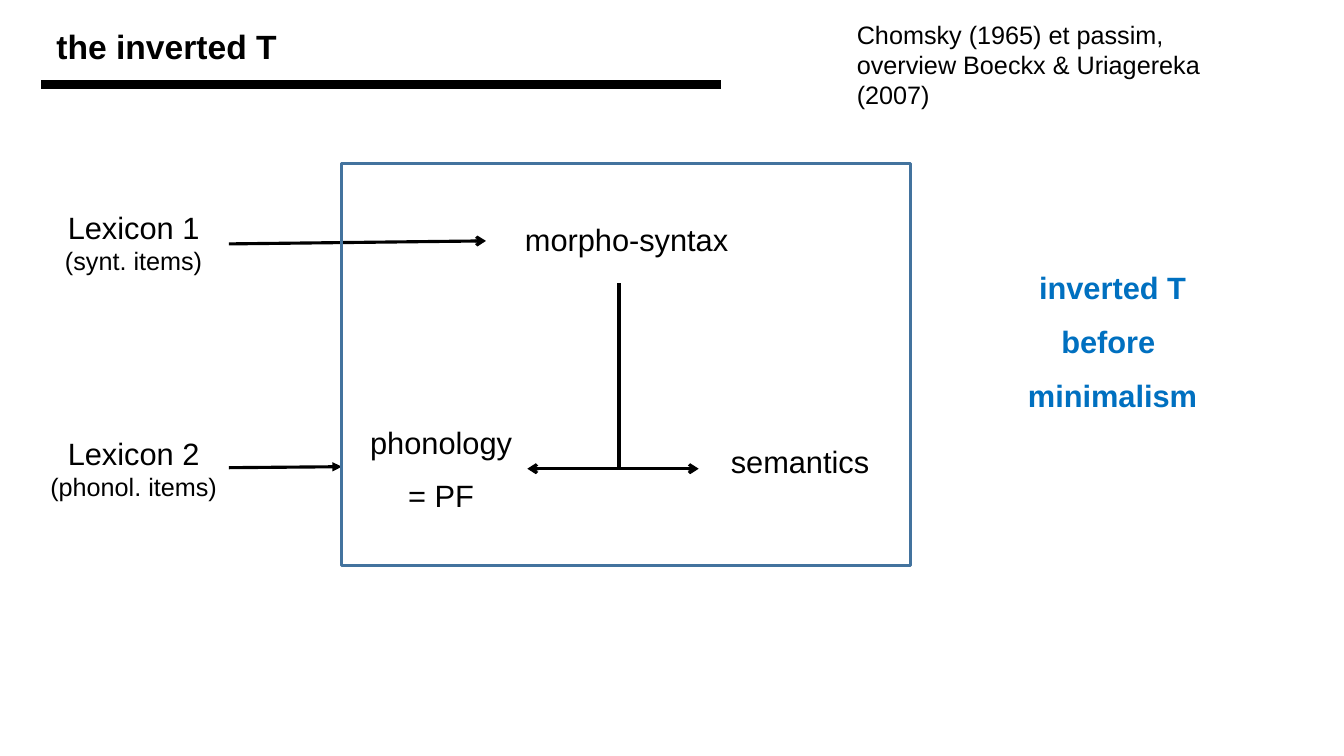
from lxml import etree
from pptx import Presentation
from pptx.dml.color import RGBColor
from pptx.enum.shapes import MSO_CONNECTOR, MSO_SHAPE
from pptx.enum.text import MSO_ANCHOR, PP_ALIGN
from pptx.oxml.ns import qn
from pptx.util import Pt

PX = 9144  # 100 px to the inch
LINE = MSO_CONNECTOR.STRAIGHT
RECT = MSO_SHAPE.RECTANGLE
TOP = MSO_ANCHOR.TOP
LEFT, MID = PP_ALIGN.LEFT, PP_ALIGN.CENTER
BLACK, BLUE, STEEL = "000000", "0070C0", "43739E"
hue = RGBColor.from_string

deck = Presentation()
deck.slide_width, deck.slide_height = 1333 * PX, 750 * PX
slide = deck.slides.add_slide(deck.slide_layouts[5])
shapes = slide.shapes


def write(text, box, sizes=(22,), color=BLACK, bold=False, align=MID, gap=0, shape=None):
    """Put one paragraph per line of text; the last size holds for the rest."""
    place = [n * PX for n in box]
    if shape is None:
        shape = shapes.add_textbox(*place)
    shape.left, shape.top, shape.width, shape.height = place
    frame = shape.text_frame
    frame.word_wrap = True
    frame.vertical_anchor = TOP
    frame.text = text
    for i, para in enumerate(frame.paragraphs):
        para.alignment = align
        para.space_before = Pt(gap if i else 0)
        font = para.runs[0].font
        font.name, font.bold = "Arial", bold
        font.size = Pt(sizes[min(i, len(sizes) - 1)])
        font.color.rgb = hue(color)


def draw(ends, width=2.25, head=None, tail=None):
    link = shapes.add_connector(LINE, *[n * PX for n in ends])
    link.line.color.rgb = hue(BLACK)
    link.line.width = Pt(width)
    props = link.line._get_or_add_ln()
    for tag, kind in (("a:headEnd", head), ("a:tailEnd", tail)):
        if kind:
            etree.SubElement(props, qn(tag), type=kind)
    etree.SubElement(link._element.spPr, qn("a:effectLst"))


# Heading
write("the inverted T", (46, 21, 835, 50), sizes=(24,), bold=True,
      align=LEFT, shape=shapes.title)
draw((41, 84, 715, 84), width=6)
write("Chomsky (1965) et passim, overview Boeckx & Uriagereka (2007)",
      (840, 14, 417, 101), sizes=(18,), align=LEFT)

# Lexicons and their arrows
for text, top in (("Lexicon 1\n(synt. items)", 202), ("Lexicon 2\n(phonol. items)", 426)):
    write(text, (32, top, 201, 77), sizes=(22, 18))
draw((227, 242, 482, 239), tail="arrow")
draw((227, 464, 339, 463), tail="triangle")

# Grammar box with the inverted T
frame = shapes.add_shape(RECT, *[n * PX for n in (339, 162, 564, 399)])
frame.shadow.inherit = False
frame.fill.background()
frame.line.color.rgb = hue(STEEL)
frame.line.width = Pt(2)
write("morpho-syntax", (326, 214, 591, 47))
write("semantics", (693, 434, 201, 47))
write("phonology\n= PF", (337, 415, 201, 103), gap=12)
draw((614, 281, 614, 465))
draw((523, 465, 693, 465), head="arrow", tail="arrow")

# Side label
write("inverted T\nbefore \nminimalism", (967, 262, 273, 158), color=BLUE, bold=True, gap=12)

deck.save("out.pptx")
